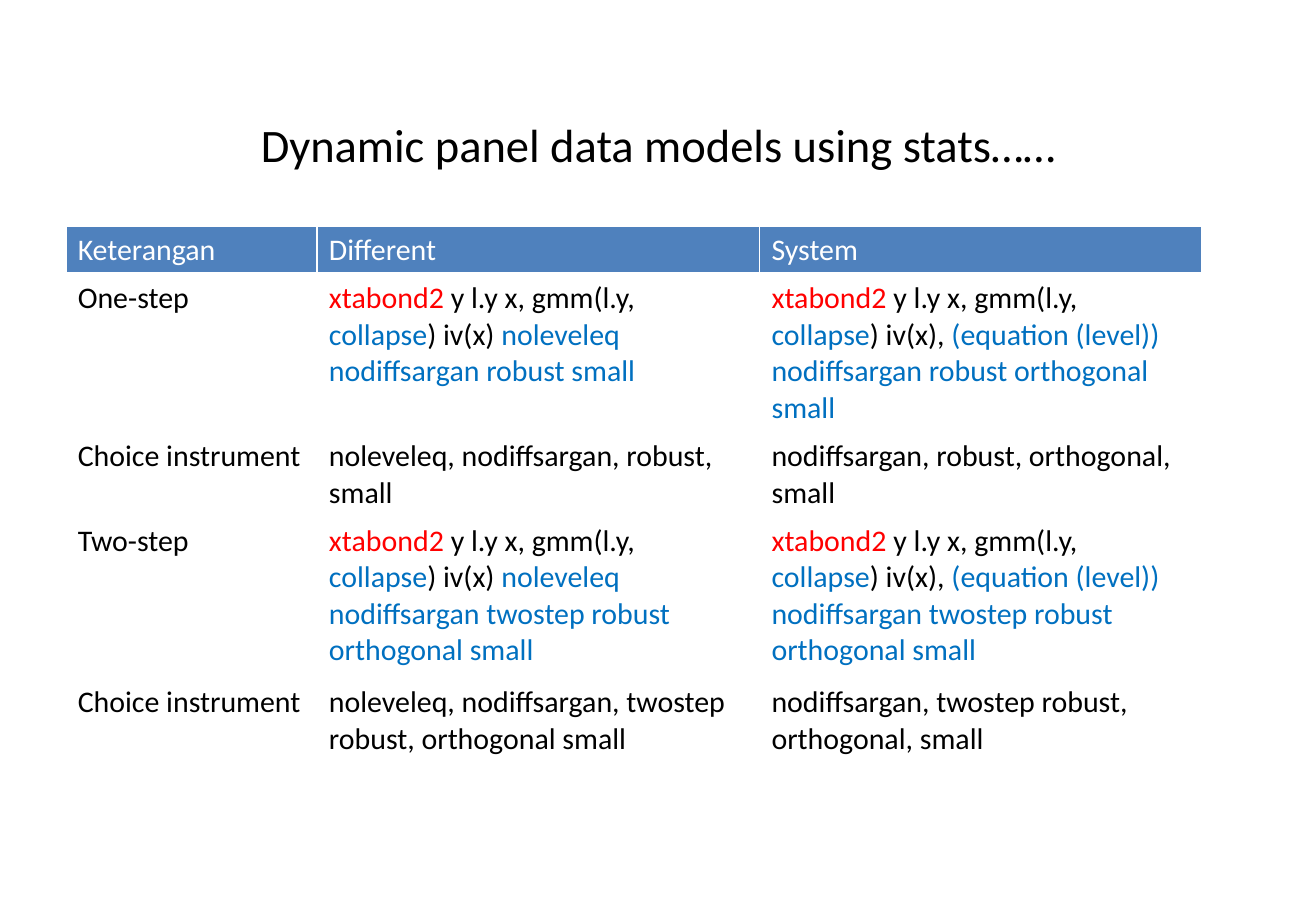
from lxml import etree
from pptx import Presentation
from pptx.dml.color import RGBColor
from pptx.enum import text
from pptx.oxml import ns
from pptx.util import Pt

WHITE = RGBColor(0xFF, 0xFF, 0xFF)
BLACK = RGBColor(0, 0, 0)
RED = RGBColor(0xFF, 0, 0)
BLUE = RGBColor(0, 0x70, 0xC0)
HEAD = RGBColor(0x4F, 0x81, 0xBD)
COLS = (151.2, 266.4, 266.4)
ROWS = (29.2, 95, 51, 97.2, 51)


def command(tail, options):
    """Return the coloured runs of one estimation command."""
    return [("xtabond2 ", RED), ("y l.y x, gmm(l.y, ", BLACK),
            ("collapse", BLUE), (tail, BLACK), (options, BLUE)]


CELLS = [
    ["Keterangan", "Different", "System"],
    ["One-step",
     command(") iv(x) ", "noleveleq nodiffsargan robust small"),
     command(") iv(x), ", "(equation (level)) nodiffsargan robust orthogonal small")],
    ["Choice instrument",
     "noleveleq, nodiffsargan, robust, small",
     "nodiffsargan, robust, orthogonal, small"],
    ["Two-step",
     command(") iv(x) ", "noleveleq nodiffsargan twostep robust orthogonal small"),
     command(") iv(x), ", "(equation (level)) nodiffsargan twostep robust orthogonal small")],
    ["Choice instrument",
     "noleveleq, nodiffsargan, twostep robust, orthogonal small",
     "nodiffsargan, twostep robust, orthogonal, small"],
]


def write(frame, words, size=18, color=BLACK, align=text.PP_ALIGN.LEFT):
    """Write a string or a list of coloured runs into a text frame."""
    frame.word_wrap = True
    para = frame.paragraphs[0]
    para.alignment = align
    for part, tint in [(words, color)] if isinstance(words, str) else words:
        run = para.add_run()
        run.text = part
        font = run.font
        font.name, font.size, font.bold = "Calibri", Pt(size), False
        font.color.rgb = tint


def border(cell, base=1):
    """Draw white lines around a cell, the bottom one of the given width."""
    props = cell._tc.get_or_add_tcPr()
    for side, width in zip("LRTB", (1, 1, 1, base)):
        line = etree.SubElement(props, ns.qn("a:ln" + side), w=str(Pt(width)))
        fill = etree.SubElement(line, ns.qn("a:solidFill"))
        etree.SubElement(fill, ns.qn("a:srgbClr"), val=str(WHITE))


def title(slide, left, top, width, height):
    """Place the centred title."""
    box = slide.shapes.add_textbox(Pt(left), Pt(top), Pt(width), Pt(height))
    box.text_frame.vertical_anchor = text.MSO_ANCHOR.MIDDLE
    write(box.text_frame, "Dynamic panel data models using stats……",
          size=28, align=text.PP_ALIGN.CENTER)


def grid(slide, left, top):
    """Place the table of commands and their instruments."""
    table = slide.shapes.add_table(len(ROWS), len(COLS), Pt(left), Pt(top),
                                   Pt(sum(COLS)), Pt(sum(ROWS))).table
    for col, width in zip(table.columns, COLS):
        col.width = Pt(width)
    for i, (row, height) in enumerate(zip(table.rows, ROWS)):
        row.height = Pt(height)
        for cell, words in zip(row.cells, CELLS[i]):
            border(cell, base=1 if i else 3)
            cell.fill.solid()
            cell.fill.fore_color.rgb = WHITE if i else HEAD
            write(cell.text_frame, words, color=BLACK if i else WHITE)


def main():
    """Build and save the slide."""
    deck = Presentation()
    deck.slide_width, deck.slide_height = Pt(792), Pt(540)
    slide = deck.slides.add_slide(deck.slide_layouts[6])
    title(slide, 39.6, 41.8, 712.8, 90)
    grid(slide, 39.6, 136)
    deck.save("out.pptx")


if __name__ == "__main__":
    main()
